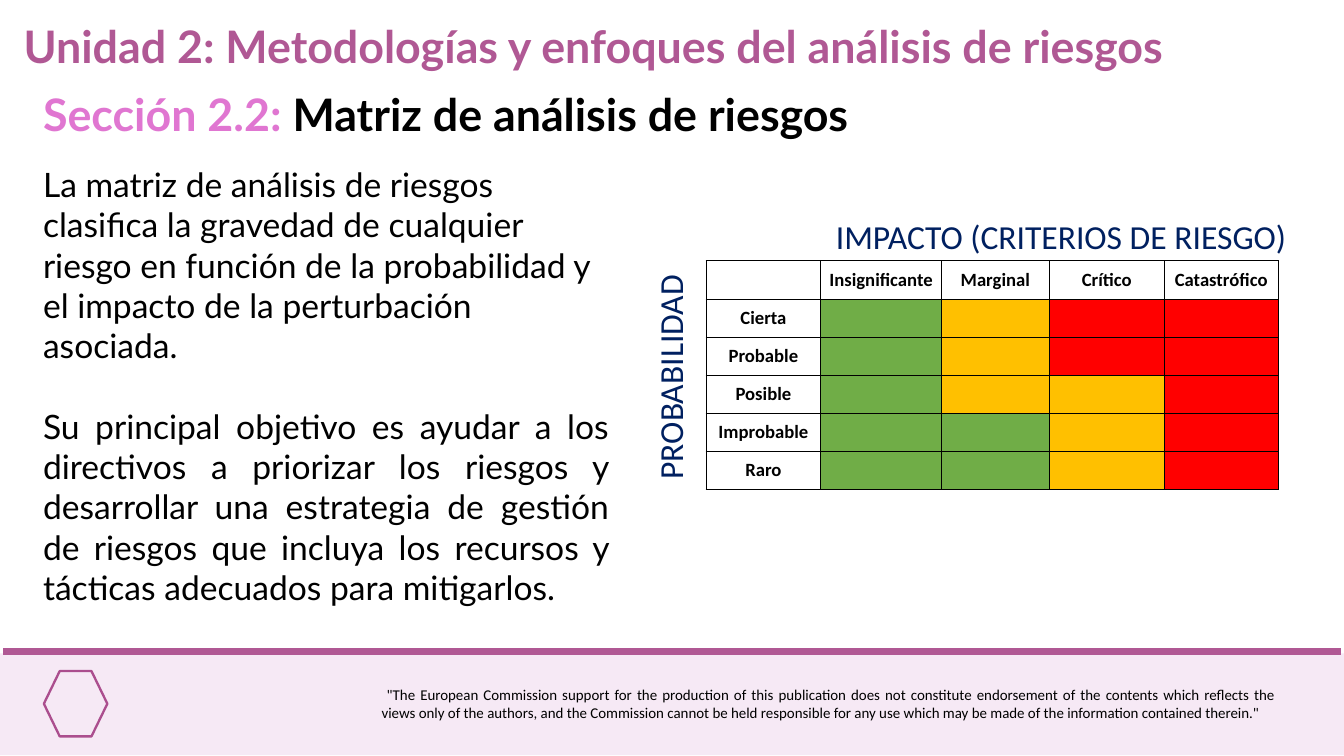
import dataclasses
import pptx
import pptx.dml.color
import pptx.enum.shapes
import pptx.enum.text
import pptx.oxml
import pptx.oxml.ns
import pptx.util

Pt = pptx.util.Pt
ALIGN = pptx.enum.text.PP_ALIGN
ANCHOR = pptx.enum.text.MSO_ANCHOR
SHAPE = pptx.enum.shapes.MSO_SHAPE


@dataclasses.dataclass(frozen=True)
class Theme:
    heading_font: str = "Lato"
    label_font: str = "Calibri"
    heading_size: int = 48
    body_size: int = 36
    cell_size: int = 20
    footer_size: int = 16
    plum: str = "B05894"
    emblem: str = "AB4E8E"
    pink: str = "E076D1"
    navy: str = "002060"
    black: str = "000000"
    white: str = "FFFFFF"
    band: str = "F6E9F5"
    low: str = "70AD47"
    medium: str = "FFC000"
    high: str = "FF0000"


def rgb(value):
    return pptx.dml.color.RGBColor.from_string(value)


class Page:
    def __init__(self, slide, theme):
        self.slide = slide
        self.theme = theme

    def style(self, run, font, size, color, bold=False):
        run.font.name = font
        run.font.size = Pt(size)
        run.font.bold = bold
        run.font.color.rgb = rgb(color)

    def place(self, shape, box):
        shape.left, shape.top, shape.width, shape.height = map(Pt, box)

    def title(self, text, box):
        heading = self.slide.shapes.title
        self.place(heading, box)
        frame = heading.text_frame
        frame.text = text
        frame.word_wrap = True
        frame.auto_size = pptx.enum.text.MSO_AUTO_SIZE.NONE
        frame.vertical_anchor = ANCHOR.TOP
        frame.paragraphs[0].alignment = ALIGN.LEFT
        self.style(frame.paragraphs[0].runs[0], self.theme.heading_font,
                   self.theme.heading_size, self.theme.plum, True)

    def text(self, paragraphs, box, font, size, bold=False,
             aligns=(ALIGN.LEFT,), gap=0, rotation=0):
        holder = self.slide.shapes.add_textbox(*map(Pt, box))
        holder.rotation = rotation
        frame = holder.text_frame
        frame.word_wrap = True
        for index, (parts, align) in enumerate(zip(paragraphs, aligns)):
            paragraph = frame.add_paragraph() if index else frame.paragraphs[0]
            paragraph.alignment = align
            if index:
                paragraph.space_before = Pt(gap)
            for wording, color in parts:
                run = paragraph.add_run()
                run.text = wording
                self.style(run, font, size, color, bold)

    def shape(self, kind, box, fill=None, line=None, weight=1):
        item = self.slide.shapes.add_shape(kind, *map(Pt, box))
        item.shadow.inherit = False
        if fill:
            item.fill.solid()
            item.fill.fore_color.rgb = rgb(fill)
        else:
            item.fill.background()
        if line:
            item.line.color.rgb = rgb(line)
            item.line.width = Pt(weight)
        else:
            item.line.fill.background()

    def rule(self, start, end, color, weight):
        line = self.slide.shapes.add_connector(
            pptx.enum.shapes.MSO_CONNECTOR.STRAIGHT, *map(Pt, start + end))
        line.line.color.rgb = rgb(color)
        line.line.width = Pt(weight)
        line._element.spPr.append(pptx.oxml.parse_xml(
            f'<a:effectLst {pptx.oxml.ns.nsdecls("a")}/>'))

    def border(self, cell):
        properties = cell._tc.get_or_add_tcPr()
        for index, side in enumerate(("lnL", "lnR", "lnT", "lnB")):
            properties.insert(index, pptx.oxml.parse_xml(
                f'<a:{side} {pptx.oxml.ns.nsdecls("a")} w="{Pt(1)}"><a:solidFill>'
                f'<a:srgbClr val="{self.theme.black}"/></a:solidFill></a:{side}>'))

    def matrix(self, impacts, likelihoods, origin, widths, row_height):
        levels = {"L": self.theme.low, "M": self.theme.medium, "H": self.theme.high}
        rows = [[("", self.theme.white)] + [(name, self.theme.white) for name in impacts]]
        for name, ratings in likelihoods:
            rows.append([(name, self.theme.white)] + [("", levels[r]) for r in ratings])
        grid = self.slide.shapes.add_table(
            len(rows), len(widths), *map(Pt, origin),
            Pt(sum(widths)), Pt(row_height * len(rows))).table
        grid.first_row = grid.horz_banding = False
        for column, width in zip(grid.columns, widths):
            column.width = Pt(width)
        for r, row in enumerate(rows):
            grid.rows[r].height = Pt(row_height)
            for c, (wording, fill) in enumerate(row):
                cell = grid.cell(r, c)
                cell.fill.solid()
                cell.fill.fore_color.rgb = rgb(fill)
                self.border(cell)
                cell.vertical_anchor = ANCHOR.MIDDLE
                if wording:
                    cell.text_frame.text = wording
                    paragraph = cell.text_frame.paragraphs[0]
                    paragraph.alignment = ALIGN.CENTER
                    self.style(paragraph.runs[0], self.theme.label_font,
                               self.theme.cell_size, self.theme.black, True)


def main():
    theme = Theme()
    deck = pptx.Presentation()
    deck.slide_width, deck.slide_height = Pt(1440), Pt(810)
    page = Page(deck.slides.add_slide(deck.slide_layouts[5]), theme)

    page.shape(SHAPE.RECTANGLE, (0, 700, 1440, 109), fill=theme.band)
    page.rule((3.6, 698), (1436.4, 698), theme.plum, 6.75)
    page.shape(SHAPE.HEXAGON, (47, 719, 68, 70), line=theme.emblem, weight=2.5)
    disclaimer = (
        ' "The European Commission support for the production of this publication '
        'does not constitute endorsement of the contents which reflects the views '
        'only of the authors, and the Commission cannot be held responsible for any '
        'use which may be made of the information contained therein."')
    page.text([[(disclaimer, theme.black)]], (401.8, 731, 972, 46),
              theme.label_font, theme.footer_size, aligns=(ALIGN.JUSTIFY,))

    page.title("Unidad 2: Metodologías y enfoques del análisis de riesgos",
               (18, 16, 1266, 65.5))
    page.text([[("Sección 2.2: ", theme.pink),
                ("Matriz de análisis de riesgos", theme.black)]],
              (39, 89.3, 1070, 65.5), theme.heading_font, theme.heading_size, True)

    definition = (
        "La matriz de análisis de riesgos clasifica la gravedad de cualquier riesgo "
        "en función de la probabilidad y el impacto de la perturbación asociada.")
    purpose = (
        "Su principal objetivo es ayudar a los directivos a priorizar los riesgos y "
        "desarrollar una estrategia de gestión de riesgos que incluya los recursos y "
        "tácticas adecuados para mitigarlos.")
    page.text([[(definition, theme.black)], [(purpose, theme.black)]],
              (39, 172, 620.6, 487.4), theme.heading_font, theme.body_size,
              aligns=(ALIGN.LEFT, ALIGN.JUSTIFY), gap=43.2)

    page.text([[("IMPACTO (CRITERIOS DE RIESGO)", theme.navy)]],
              (888.5, 228.2, 510, 51), theme.label_font, theme.body_size)
    page.matrix(
        ("Insignificante", "Marginal", "Crítico", "Catastrófico"),
        (("Cierta", "LMHH"), ("Probable", "LMHH"), ("Posible", "LMMH"),
         ("Improbable", "LLMH"), ("Raro", "LLMH")),
        (756.5, 279.4), (122.9, 129.2, 115.8, 122.9, 122.4), 40.9)
    page.text([[("PROBABILIDAD", theme.navy)]], (599.8, 377.3, 236, 51),
              theme.label_font, theme.body_size, rotation=270)

    deck.save("out.pptx")


if __name__ == "__main__":
    main()
